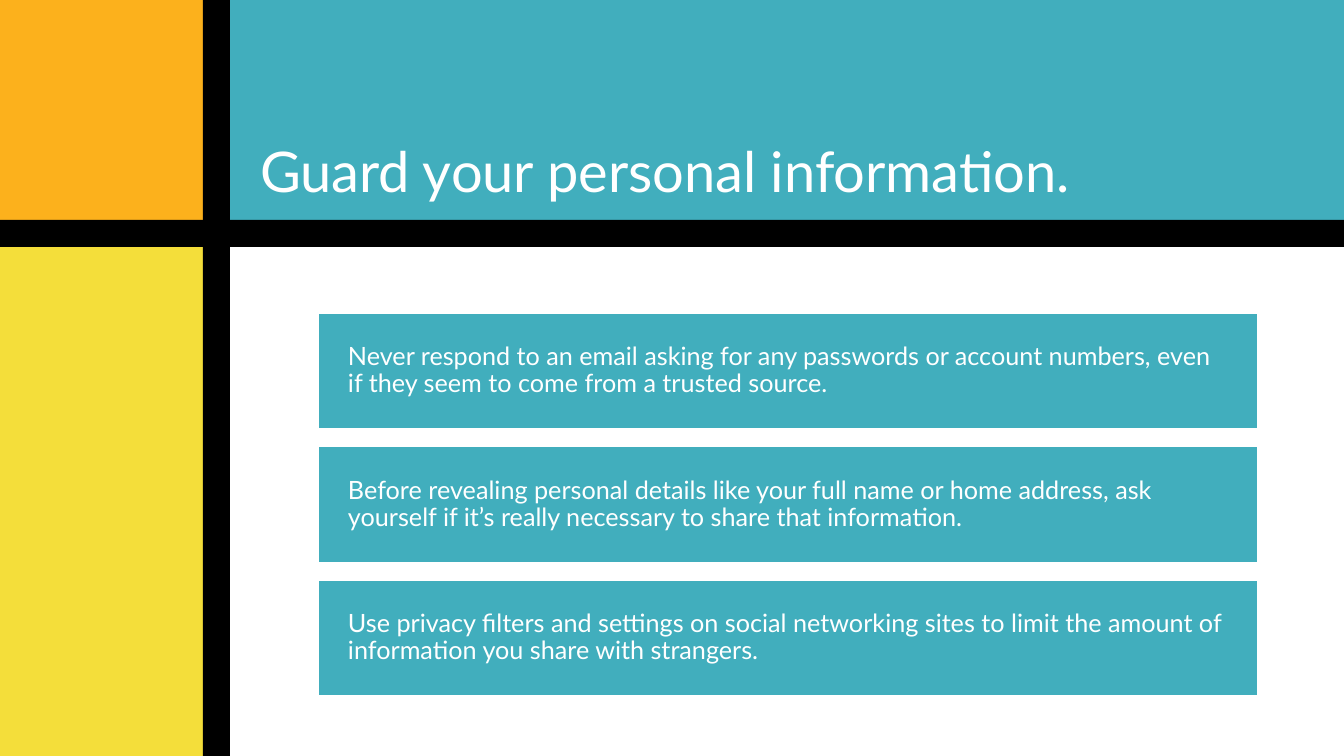
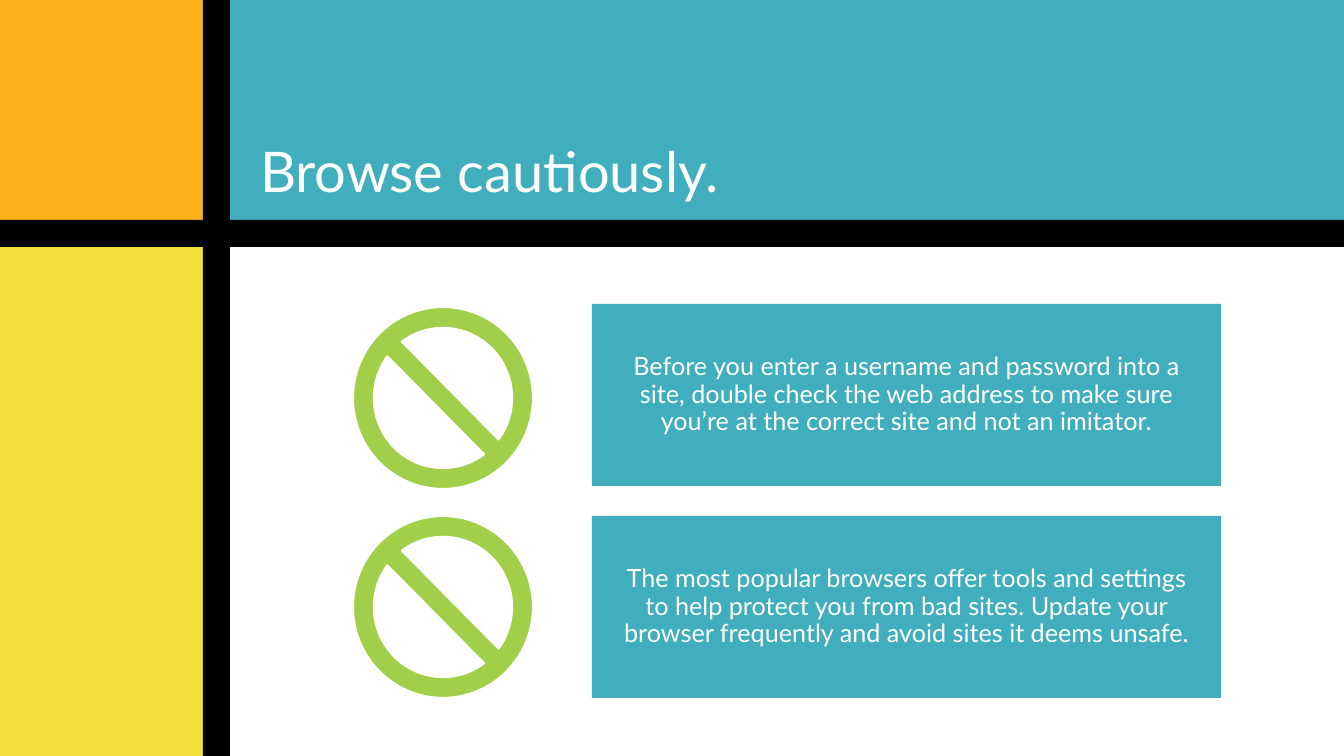
from pptx import Presentation
from pptx.dml.color import RGBColor
from pptx.enum.shapes import MSO_SHAPE
from pptx.enum.text import MSO_ANCHOR, PP_ALIGN
from pptx.util import Pt

RECTANGLE = MSO_SHAPE.RECTANGLE
NO_SYMBOL = MSO_SHAPE.NO_SYMBOL
MIDDLE, BOTTOM = MSO_ANCHOR.MIDDLE, MSO_ANCHOR.BOTTOM
LEFT, CENTER = PP_ALIGN.LEFT, PP_ALIGN.CENTER

TEAL = RGBColor(0x41, 0xAE, 0xBD)
ORANGE = RGBColor(0xFC, 0xB1, 0x1C)
YELLOW = RGBColor(0xF4, 0xDE, 0x3A)
GREEN = RGBColor(0xA2, 0xCF, 0x49)
BLACK = RGBColor(0, 0, 0)
WHITE = RGBColor(0xFF, 0xFF, 0xFF)
FONT = "Lato"

# Lengths are in px
EMU_PER_PX = 914400 / 100.8
SLIDE_WIDTH, SLIDE_HEIGHT = 1344, 756
SIDE_WIDTH, HEADER_HEIGHT, BAR = 203, 220, 27
MAIN_LEFT = SIDE_WIDTH + BAR
MAIN_TOP = HEADER_HEIGHT + BAR
TITLE_HEIGHT = 92

GUARD_TIPS = [
    "Never respond to an email asking for any passwords or account numbers, "
    "even if they seem to come from a trusted source.",
    "Before revealing personal details like your full name or home address, "
    "ask yourself if it’s really necessary to share that information.",
    "Use privacy filters and settings on social networking sites to limit "
    "the amount of information you share with strangers.",
]
BROWSE_TIPS = [
    "Before you enter a username and password into a site, double check the "
    "web address to make sure you’re at the correct site and not an imitator.",
    "The most popular browsers offer tools and settings to help protect you "
    "from bad sites. Update your browser frequently and avoid sites it deems "
    "unsafe.",
]


def px(length):
    return round(length * EMU_PER_PX)


def add_block(slide, box, fill, kind=RECTANGLE, line_width=None):
    """Add a filled shape, with a white outline if a line width is given."""
    shape = slide.shapes.add_shape(kind, *map(px, box))
    shape.shadow.inherit = False
    shape.fill.solid()
    shape.fill.fore_color.rgb = fill
    if line_width is None:
        shape.line.fill.background()
    else:
        shape.line.color.rgb = WHITE
        shape.line.width = Pt(line_width)
    return shape


def write_text(shape, text, size=18, align=LEFT, anchor=MIDDLE,
               inset_x=30, inset_y=10):
    frame = shape.text_frame
    frame.word_wrap = True
    frame.vertical_anchor = anchor
    frame.margin_left = frame.margin_right = px(inset_x)
    frame.margin_top = frame.margin_bottom = px(inset_y)
    paragraph = frame.paragraphs[0]
    paragraph.alignment = align
    paragraph.line_spacing = 0.9
    run = paragraph.add_run()
    run.text = text
    run.font.name = FONT
    run.font.size = Pt(size)
    run.font.color.rgb = WHITE


def stack(box, count, gap):
    """Split a box into equal rows with a gap between them."""
    left, top, width, height = box
    row_height = (height - (count - 1) * gap) / count
    return [(left, top + index * (row_height + gap), width, row_height)
            for index in range(count)]


def add_frame(slide, title):
    """Draw the colour panels, the black bars and the title."""
    main_width = SLIDE_WIDTH - MAIN_LEFT
    panels = [
        ((MAIN_LEFT, 0, main_width, HEADER_HEIGHT), TEAL),
        ((0, 0, SIDE_WIDTH, HEADER_HEIGHT), ORANGE),
        ((0, MAIN_TOP, SIDE_WIDTH, SLIDE_HEIGHT - MAIN_TOP), YELLOW),
        ((0, HEADER_HEIGHT, SLIDE_WIDTH, BAR), BLACK),
        ((SIDE_WIDTH, 0, BAR, SLIDE_HEIGHT), BLACK),
    ]
    for box, fill in panels:
        add_block(slide, box, fill)
    title_box = (MAIN_LEFT, HEADER_HEIGHT - TITLE_HEIGHT,
                 main_width, TITLE_HEIGHT)
    write_text(slide.shapes.add_textbox(*map(px, title_box)), title,
               size=40, anchor=BOTTOM, inset_y=15)


def add_cards(slide, box, texts, gap, line_width=None, **text_format):
    for card_box, text in zip(stack(box, len(texts), gap), texts):
        card = add_block(slide, card_box, TEAL, line_width=line_width)
        write_text(card, text, **text_format)


def add_signs(slide, box, count, gap):
    for sign_box in stack(box, count, gap):
        sign = add_block(slide, sign_box, GREEN, NO_SYMBOL, line_width=1.5)
        sign.adjustments[0] = 0.116


def add_slide(presentation, title):
    slide = presentation.slides.add_slide(presentation.slide_layouts[6])
    add_frame(slide, title)
    return slide


def build_guard_slide(presentation):
    slide = add_slide(presentation, "Guard your personal information.")
    add_cards(slide, (318, 313, 940, 383), GUARD_TIPS, gap=18, line_width=1)


def build_browse_slide(presentation):
    slide = add_slide(presentation, "Browse cautiously.")
    add_cards(slide, (592, 304, 629, 394), BROWSE_TIPS, gap=30,
              align=CENTER, inset_x=20)
    add_signs(slide, (353, 307, 180, 391), len(BROWSE_TIPS), gap=27)


def main():
    presentation = Presentation()
    presentation.slide_width = px(SLIDE_WIDTH)
    presentation.slide_height = px(SLIDE_HEIGHT)
    build_guard_slide(presentation)
    build_browse_slide(presentation)
    presentation.save("out.pptx")


if __name__ == "__main__":
    main()
